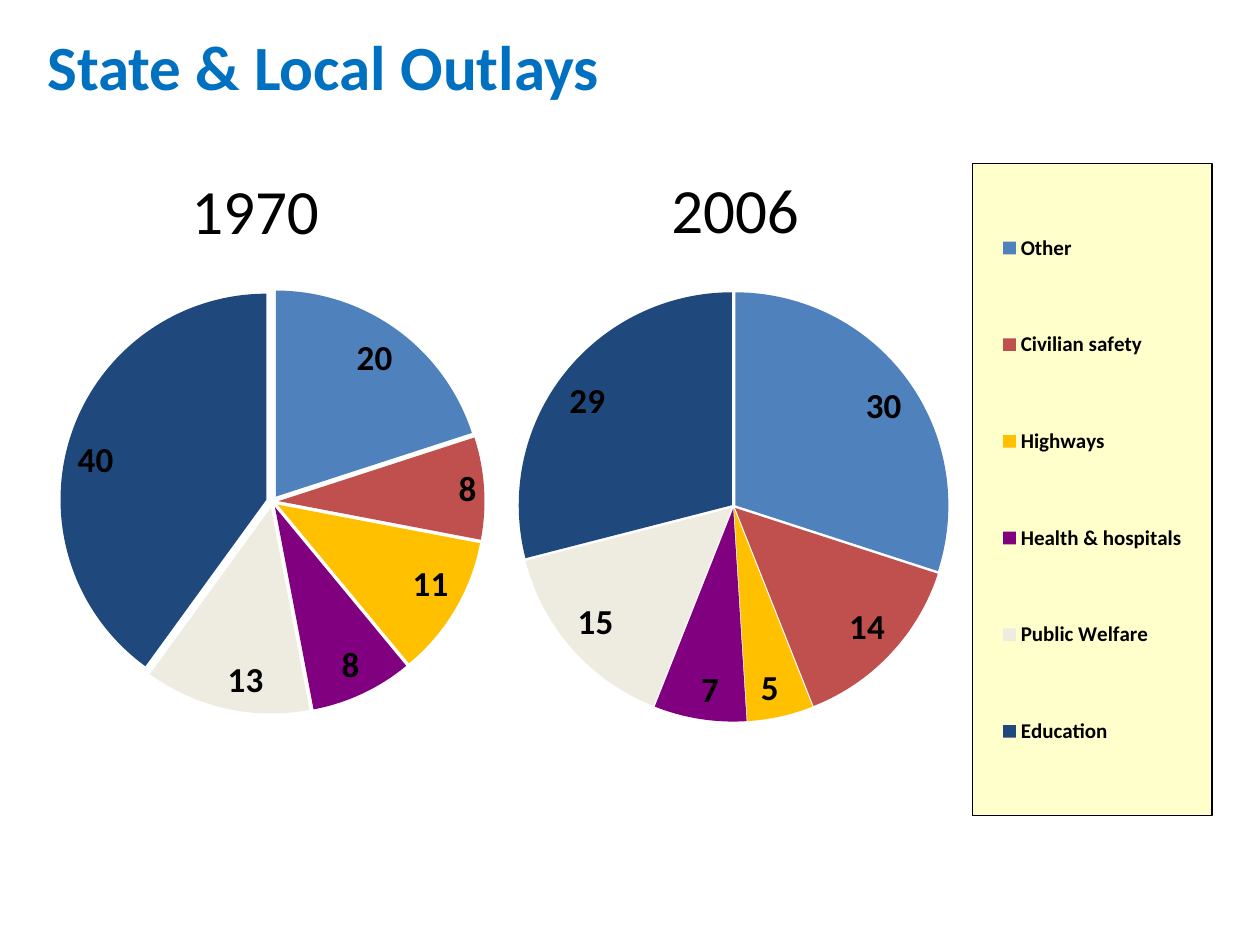
from lxml import etree
from pptx import Presentation
from pptx.chart.data import CategoryChartData
from pptx.dml.color import RGBColor
from pptx.enum import chart as ch, text
from pptx.oxml import parse_xml
from pptx.oxml.ns import nsdecls, qn
from pptx.util import Inches, Pt

# Content
TITLE = "State & Local Outlays"
CATEGORIES = ["Other", "Civilian safety", "Highways", "Health & hospitals",
              "Public Welfare", "Education"]
PIES = [  # boxes in inches, plot and legend as fractions of the chart
    dict(year="1970", year_box=(1.42, 1.31, 1.34, 0.65),
         values=[20, 8, 11, 8, 13, 40], box=(0, 1.75, 4.08, 4.21),
         plot=(0.1, 0.13, 0.86, 0.8), explosion=3, legend=None),
    dict(year="2006", year_box=(5.23, 1.3, 1.23, 0.65),
         values=[30, 14, 5, 7, 15, 29], box=(3.67, 1.14, 6.33, 5.34),
         plot=(0.07, 0.22, 0.54, 0.64), explosion=1,
         legend=(0.64, 0.03, 0.3, 0.97)),
]

# Style
FONT = "Calibri"
BLUE = RGBColor(0x00, 0x70, 0xC0)
BLACK = RGBColor(0x00, 0x00, 0x00)
CREAM = RGBColor(0xFF, 0xFF, 0xCC)
SLICES = [RGBColor(0x4F, 0x81, 0xBD), RGBColor(0xC0, 0x50, 0x4D),
          RGBColor(0xFF, 0xC0, 0x00), RGBColor(0x80, 0x00, 0x80),
          RGBColor(0xEE, 0xEC, 0xE1), RGBColor(0x1F, 0x49, 0x7D)]


def inches(box):
    return [Inches(v) for v in box]


def style(font, size, color, bold, name=FONT):
    font.name, font.size, font.bold = name, Pt(size), bold
    font.color.rgb = color


def write(sp, words, color, bold, align):
    tf = sp.text_frame
    tf.text = words
    tf.word_wrap = False
    tf.vertical_anchor = text.MSO_ANCHOR.TOP
    p = tf.paragraphs[0]
    p.alignment = align
    style(p.font, 36, color, bold)


def layout(box, inner=False):
    """Manual layout element for a plot area or a legend."""
    target = '<c:layoutTarget val="inner"/>' if inner else ""
    modes = "".join(f'<c:{a}Mode val="edge"/>' for a in "xy")
    sizes = "".join(f'<c:{a} val="{v}"/>' for a, v in zip("xywh", box))
    return parse_xml(f'<c:layout {nsdecls("c")}><c:manualLayout>{target}'
                     f'{modes}{sizes}</c:manualLayout></c:layout>')


def add_legend(chart, box):
    chart.has_legend = True
    legend = chart.legend
    legend.position = ch.XL_LEGEND_POSITION.RIGHT
    legend.include_in_layout = False
    style(legend.font, 12, BLACK, True)
    el = legend._element
    for old in el.findall(qn("c:layout")):
        el.remove(old)
    el.find(qn("c:legendPos")).addnext(layout(box))
    el.find(qn("c:txPr")).addprevious(parse_xml(
        f'<c:spPr {nsdecls("c", "a")}>'
        f'<a:solidFill><a:srgbClr val="{CREAM}"/></a:solidFill>'
        f'<a:ln w="9525"><a:solidFill><a:srgbClr val="{BLACK}"/>'
        '</a:solidFill></a:ln></c:spPr>'))


def add_pie(s, pie):
    data = CategoryChartData()
    data.categories = CATEGORIES
    data.add_series(pie["year"], pie["values"])
    chart = s.shapes.add_chart(ch.XL_CHART_TYPE.PIE, *inches(pie["box"]),
                               data).chart
    chart.has_title = chart.has_legend = False
    style(chart.font, 18.4, BLACK, True, "Times New Roman")

    # Plot position
    area = chart._chartSpace.chart.plotArea
    for old in area.findall(qn("c:layout")):
        area.remove(old)
    area.insert(0, layout(pie["plot"], inner=True))

    # Slices
    plot = chart.plots[0]
    plot.vary_by_categories = True
    series = plot.series[0]
    for i, color in enumerate(SLICES):
        fill = series.points[i].format.fill
        fill.solid()
        fill.fore_color.rgb = color
    explosion = etree.Element(qn("c:explosion"), val=str(pie["explosion"]))
    series._element.find(qn("c:dPt")).addprevious(explosion)

    # Value labels
    labels = series.data_labels
    labels.show_value = True
    labels.show_percentage = False
    labels.position = ch.XL_LABEL_POSITION.INSIDE_END
    style(labels.font, 20, BLACK, True)

    if pie["legend"]:
        add_legend(chart, pie["legend"])


prs = Presentation()
prs.slide_width, prs.slide_height = Inches(10), Inches(7.5)
s = prs.slides.add_slide(prs.slide_layouts[5])

# Title
title = s.shapes.title
title.left, title.top, title.width, title.height = inches((0.25, 0.17, 4.63, 0.65))
write(title, TITLE, BLUE, True, text.PP_ALIGN.CENTER)

# Pies with their years
for pie in PIES:
    add_pie(s, pie)
for pie in PIES:
    sp = s.shapes.add_textbox(*inches(pie["year_box"]))
    write(sp, pie["year"], BLACK, False, text.PP_ALIGN.LEFT)

prs.save("out.pptx")
